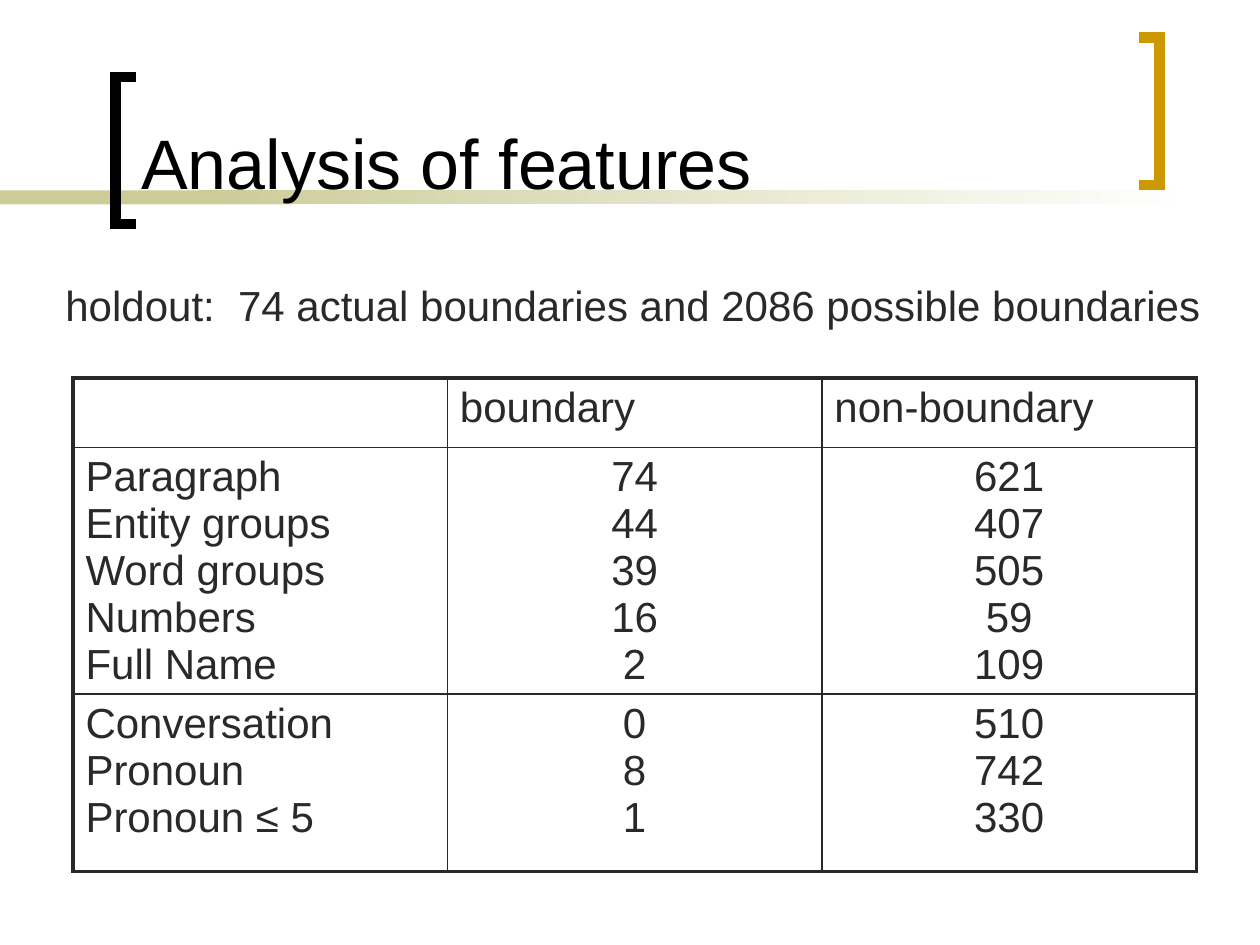
from lxml import etree
from pptx import Presentation
from pptx import util as u
from pptx.dml.color import RGBColor
from pptx.enum import shapes, text
from pptx.oxml import ns

COLORS = {"ink": "292929", "black": "000000", "sand": "CCCC99",
          "gold": "CC9900", "white": "FFFFFF"}
FONT = "Arial"
ROWS = [
    ["", "boundary", "non-boundary"],
    ["Paragraph\nEntity groups\nWord groups\nNumbers\nFull Name",
     "74\n44\n39\n16\n2", "621\n407\n505\n59\n109"],
    ["Conversation\nPronoun\nPronoun ≤ 5", "0\n8\n1", "510\n742\n330"],
]


def rgb(name):
    return RGBColor.from_string(COLORS[name])


def write(frame, content, size=24, color="ink", align=text.PP_ALIGN.LEFT):
    para = frame.paragraphs[0]
    para.text = content
    para.alignment = align
    for span in para.runs:
        span.font.size = u.Pt(size)
        span.font.name = FONT
        span.font.color.rgb = rgb(color)


class SlideBuilder:
    thin, thick = 1, 2.25

    def __init__(self, page):
        self.page = page

    def place(self, box, left, top, width, height):
        box.left, box.top = u.Cm(left), u.Cm(top)
        box.width, box.height = u.Cm(width), u.Cm(height)

    def title(self, content, *area):
        box = self.page.shapes.title
        self.place(box, *area)
        box.element.getparent().append(box.element)
        frame = box.text_frame
        frame.auto_size = text.MSO_AUTO_SIZE.NONE
        frame.vertical_anchor = text.MSO_ANCHOR.BOTTOM
        write(frame, content, size=40, color="black")

    def band(self, *area, start, end=None):
        box = self.page.shapes.add_shape(
            shapes.MSO_SHAPE.RECTANGLE, *map(u.Cm, area))
        box.shadow.inherit = False
        box.line.fill.background()
        if end is None:
            box.fill.solid()
            box.fill.fore_color.rgb = rgb(start)
            return
        box.fill.gradient()
        box.fill.gradient_angle = 0
        for stop, name in zip(box.fill.gradient_stops, (start, end)):
            stop.color.rgb = rgb(name)

    def bracket(self, tip, spine, top, bottom, color):
        tip, spine, top, bottom = map(u.Cm, (tip, spine, top, bottom))
        builder = self.page.shapes.build_freeform(tip, top)
        builder.add_line_segments(
            [(spine, top), (spine, bottom), (tip, bottom)], close=False)
        box = builder.convert_to_shape()
        box.shadow.inherit = False
        box.fill.background()
        box.line.width = u.Pt(6)
        box.line.color.rgb = rgb(color)
        line = box.element.spPr.find(ns.qn("a:ln"))
        etree.SubElement(line, ns.qn("a:miter"), lim="800000")

    def note(self, content, *area):
        box = self.page.shapes.add_textbox(*map(u.Cm, area))
        box.text_frame.word_wrap = True
        write(box.text_frame, content)

    def borders(self, cell, outer):
        properties = cell._tc.get_or_add_tcPr()
        for index, (side, is_outer) in enumerate(zip("LRTB", outer)):
            width = self.thick if is_outer else self.thin
            line = etree.Element(ns.qn(f"a:ln{side}"), w=str(u.Pt(width)))
            fill = etree.SubElement(line, ns.qn("a:solidFill"))
            etree.SubElement(fill, ns.qn("a:srgbClr"), val=COLORS["ink"])
            properties.insert(index, line)

    def table(self, rows, heights, *area):
        last_row, last_column = len(rows) - 1, len(rows[0]) - 1
        holder = self.page.shapes.add_table(
            len(rows), len(rows[0]), *map(u.Cm, area))
        grid = holder.table
        grid.first_row = grid.horz_banding = False
        for row, height in zip(grid.rows, heights):
            row.height = u.Cm(height)
        self.place(holder, *area)
        for r, values in enumerate(rows):
            for c, value in enumerate(values):
                cell = grid.cell(r, c)
                cell.fill.background()
                centred = r > 0 and c > 0
                write(cell.text_frame, value, align=text.PP_ALIGN.CENTER
                      if centred else text.PP_ALIGN.LEFT)
                self.borders(cell, (c == 0, c == last_column,
                                    r == 0, r == last_row))


def main():
    deck = Presentation()
    deck.slide_width, deck.slide_height = u.Cm(25.4), u.Cm(19.05)
    slide = SlideBuilder(deck.slides.add_slide(deck.slide_layouts[5]))
    slide.band(0, 3.84, 5.92, 0.28, start="sand")
    slide.band(4.01, 3.84, 20.12, 0.28, start="sand", end="white")
    slide.bracket(2.74, 2.33, 1.55, 4.52, "black")
    slide.bracket(22.96, 23.37, 0.76, 3.73, "gold")
    slide.title("Analysis of features", 2.59, 0.28, 19.89, 3.94)
    slide.table(ROWS, (1.4, 3.81, 3.58), 1.47, 7.62, 22.65, 10.31)
    slide.note("holdout:  74 actual boundaries and 2086 possible boundaries",
               1.07, 5.51, 23.93, 1.27)
    deck.save("out.pptx")


if __name__ == "__main__":
    main()
